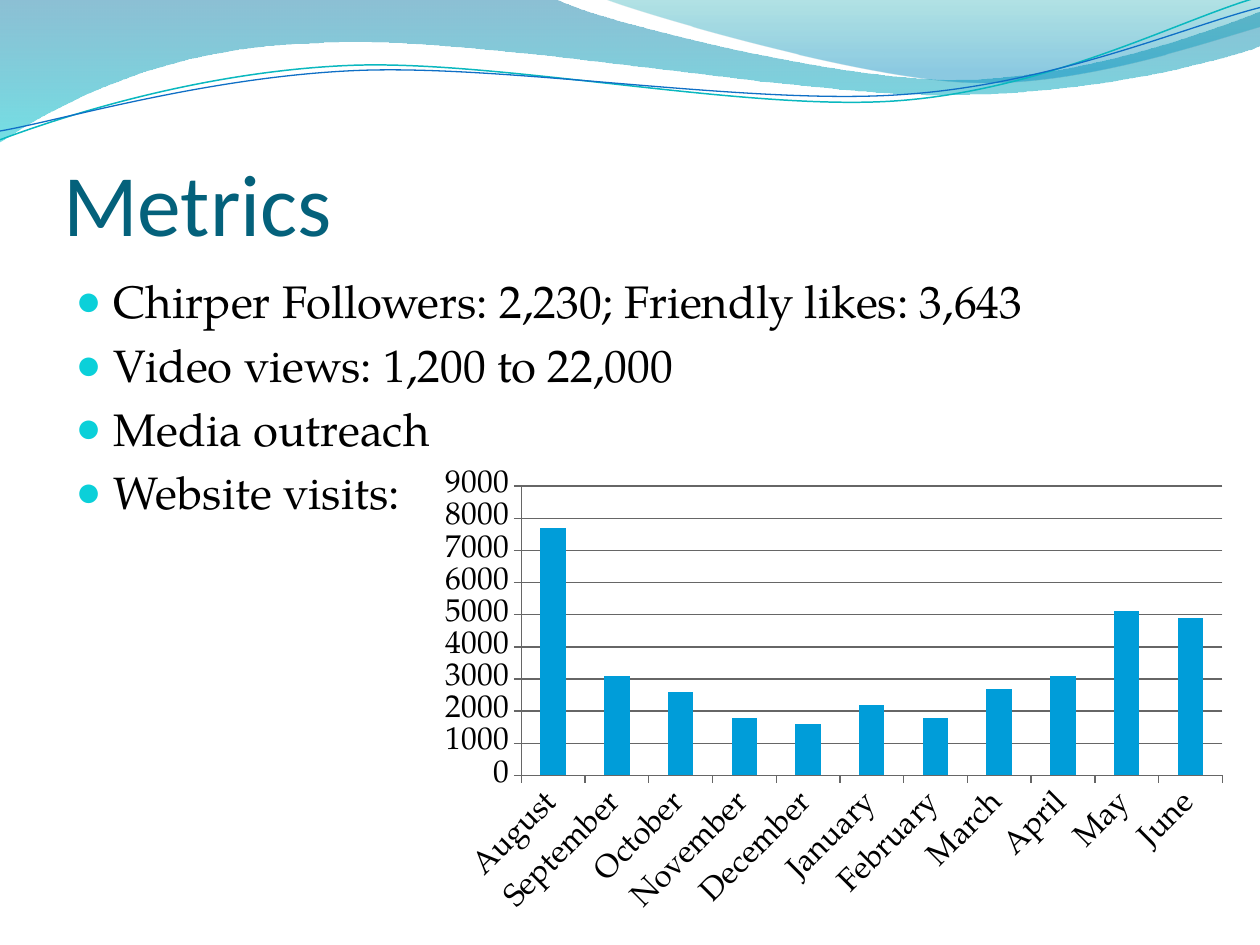
from lxml.etree import SubElement
from pptx import Presentation
from pptx.chart.data import CategoryChartData
from pptx.dml.color import RGBColor
from pptx.enum.chart import XL_CHART_TYPE, XL_TICK_MARK
from pptx.enum.text import MSO_ANCHOR, PP_ALIGN
from pptx.oxml.ns import qn
from pptx.util import Pt

PX = 9144
SERIF = "TeX Gyre Pagella"
ITEMS = [
    "Chirper Followers: 2,230; Friendly likes: 3,643",
    "Video views: 1,200 to 22,000",
    "Media outreach",
    "Website visits:",
]
VISITS = {
    "August": 7700, "September": 3100, "October": 2600, "November": 1800,
    "December": 1600, "January": 2200, "February": 1800, "March": 2700,
    "April": 3100, "May": 5100, "June": 4900,
}
BANDS = [
    ([(0, 0), (440, -1), (476, 17, 664, 63, 758, 63), (853, 63, 958, 26, 1000, 9),
      (1001, 36), (983, 44, 870, 76, 746, 75), (622, 75, 382, 28, 257, 34),
      (129, 36, 46, 83, -1, 113)],
     [(0, "0074A1", 45), (1, "00C6CF", 55)]),
    ([(479, -1), (509, 11, 682, 62, 769, 65), (856, 69, 961, 32, 1000, 21), (1000, 0)],
     [(0, "00A1A9", 30), (0.8, "008BBF", 45)]),
]
LINES = [
    ([(0, 111), (48, 93, 158, 57, 277, 52), (395, 47, 593, 89, 713, 80),
      (833, 71, 938, 15, 998, -2)], "0AB8BF", 0.85),
    ([(0, 104), (47, 96, 164, 61, 283, 56), (403, 51, 597, 84, 717, 75),
      (836, 67, 941, 21, 1000, 6)], "0F6FC6", 0.75),
]


def color(code):
    """Return the colour of a hex string."""
    return RGBColor.from_string(code)


def place(shape, box):
    """Move and size a shape to a box in px."""
    shape.left, shape.top, shape.width, shape.height = (n * PX for n in box)


def bend(shape, path):
    """Join the straight steps of a freeform into the cubic curves of a path."""
    steps = shape._element.spPr.iter(qn("a:lnTo"))
    steps = iter(list(steps))
    for step in path[1:]:
        first = next(steps)
        if len(step) == 6:
            first.tag = qn("a:cubicBezTo")
            for _ in range(2):
                other = next(steps)
                first.append(other[0])
                other.getparent().remove(other)


def draw(slide, box, path, close):
    """Add a freeform along a path that starts from the corner of a box."""
    points = [((box[0] + step[i]) * PX, (box[1] + step[i + 1]) * PX)
              for step in path for i in range(0, len(step), 2)]
    pen = slide.shapes.build_freeform(*points[0])
    pen.add_line_segments(points[1:], close=close)
    shape = pen.convert_to_shape()
    bend(shape, path)
    shape.shadow.inherit = False
    return shape


def add_waves(slide, box):
    """Draw the tinted bands and the two thin curves in a box."""
    for path, stops in BANDS:
        band = draw(slide, box, path, True)
        band.line.fill.background()
        band.fill.gradient()
        band.fill.gradient_angle = 270
        for stop, (spot, code, alpha) in zip(band.fill.gradient_stops, stops):
            stop.position = spot
            stop.color.rgb = color(code)
        tints = band._element.spPr.iter(qn("a:srgbClr"))
        for tint, (spot, code, alpha) in zip(tints, stops):
            SubElement(tint, qn("a:alpha"), val=str(alpha * 1000))
    for path, code, width in LINES:
        curve = draw(slide, box, path, False)
        curve.fill.background()
        curve.line.color.rgb = color(code)
        curve.line.width = Pt(width)


def add_title(slide, box):
    """Fill the title placeholder."""
    title = slide.shapes.title
    slide.shapes._spTree.append(title._element)
    place(title, box)
    frame = title.text_frame
    frame.text = "Metrics"
    frame.vertical_anchor = MSO_ANCHOR.BOTTOM
    frame.margin_left = frame.margin_right = frame.margin_bottom = 0
    para = frame.paragraphs[0]
    para.alignment = PP_ALIGN.LEFT
    font = para.runs[0].font
    font.name, font.size = "Calibri", Pt(50)
    font.color.rgb = color("04617B")


def add_bullet(para):
    """Give a paragraph a round bullet and a hanging indent."""
    props = para._p.get_or_add_pPr()
    props.set("marL", str(30 * PX))
    props.set("indent", str(-30 * PX))
    tint = SubElement(props, qn("a:buClr"))
    SubElement(tint, qn("a:srgbClr"), val="0BD0D9")
    SubElement(props, qn("a:buSzPct"), val="95000")
    SubElement(props, qn("a:buChar"), char="●")


def add_list(slide, box):
    """Fill the body placeholder with the bullet list."""
    body = slide.placeholders[1]
    slide.shapes._spTree.append(body._element)
    place(body, box)
    frame = body.text_frame
    frame.text = "\n".join(ITEMS)
    for i, para in enumerate(frame.paragraphs):
        add_bullet(para)
        para.space_before = Pt(5.2 if i else 0)
        font = para.runs[0].font
        font.name, font.size = SERIF, Pt(26)
        font.color.rgb = color("000000")


def add_graph(slide, box):
    """Add the column chart of monthly visits."""
    data = CategoryChartData()
    data.categories = list(VISITS)
    data.add_series("Series 1", list(VISITS.values()))
    chart = slide.shapes.add_chart(
        XL_CHART_TYPE.COLUMN_CLUSTERED, *(n * PX for n in box), data).chart
    chart.has_legend = chart.has_title = False
    chart.font.name, chart.font.size = SERIF, Pt(18)
    chart.font.color.rgb = color("000000")
    plot = chart.plots[0]
    plot.gap_width, plot.vary_by_categories = 150, False
    fill = plot.series[0].format.fill
    fill.solid()
    fill.fore_color.rgb = color("009DD9")
    months, scale = chart.category_axis, chart.value_axis
    scale.minimum_scale, scale.maximum_scale, scale.major_unit = 0, 9000, 1000
    scale.has_major_gridlines = True
    for axis in (months, scale):
        axis.major_tick_mark = XL_TICK_MARK.OUTSIDE
        axis.minor_tick_mark = XL_TICK_MARK.NONE
        axis.tick_labels.font.size = Pt(18)
    for part in (months, scale, scale.major_gridlines):
        part.format.line.color.rgb = color("666666")
        part.format.line.width = Pt(0.75)
    months._element.find(qn("c:txPr")).find(qn("a:bodyPr")).set("rot", "-2700000")


def main():
    """Build and save the slide."""
    deck = Presentation()
    deck.slide_width, deck.slide_height = 1000 * PX, 750 * PX
    slide = deck.slides.add_slide(deck.slide_layouts[1])
    add_waves(slide, (0, 0, 1000, 114))
    add_title(slide, (50, 77, 900, 125))
    add_list(slide, (50, 212, 900, 480))
    add_graph(slide, (341, 366, 642, 368))
    deck.save("out.pptx")


if __name__ == "__main__":
    main()
